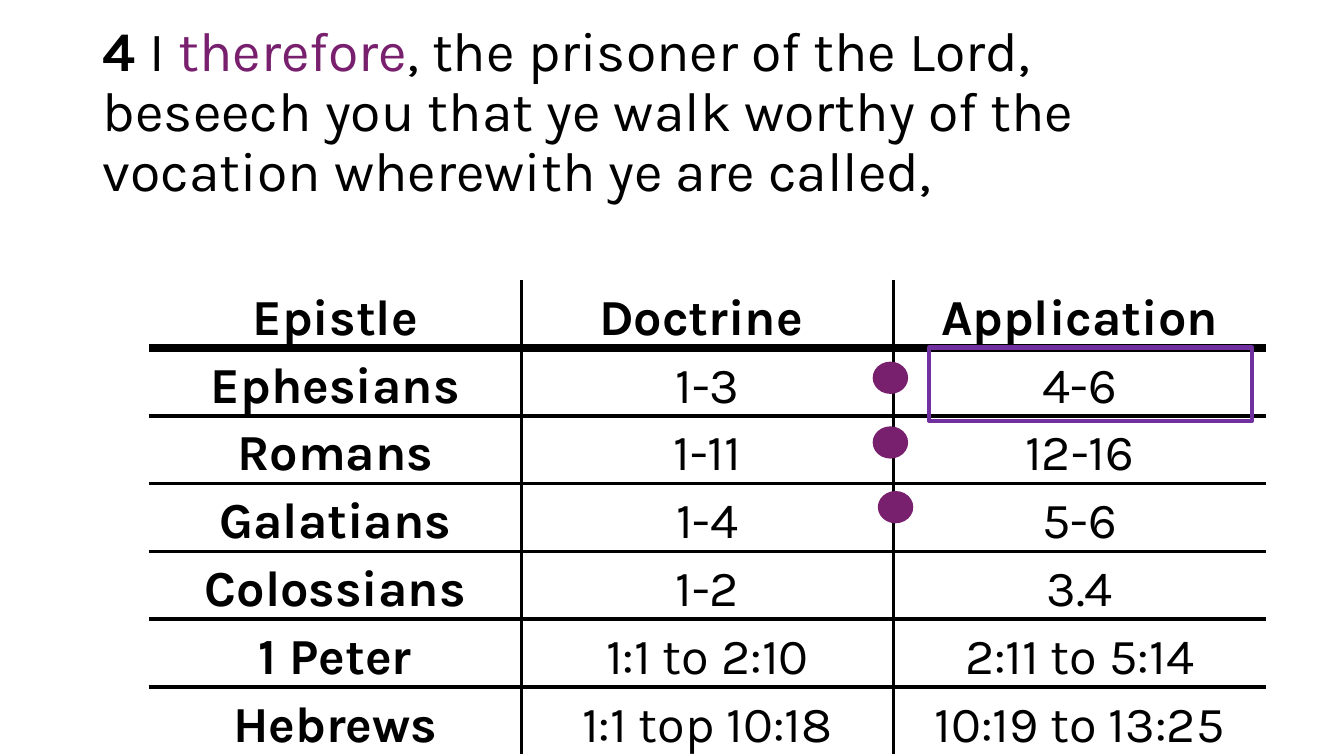
import pptx
import pptx.util
import pptx.dml.color
import pptx.enum.shapes
import pptx.enum.text
import pptx.oxml
import pptx.oxml.ns

Cm, Pt = pptx.util.Cm, pptx.util.Pt
RGBColor = pptx.dml.color.RGBColor
MSO_SHAPE = pptx.enum.shapes.MSO_SHAPE

BLACK = RGBColor(0x00, 0x00, 0x00)
WHITE = RGBColor(0xFF, 0xFF, 0xFF)
PLUM = RGBColor(0x78, 0x20, 0x6E)
VIOLET = RGBColor(0x70, 0x30, 0xA0)
FONT = "Karla"


def set_borders(cell, **borders):
    """Give each named side (L, R, T, B) a line of (colour, points)."""
    tcPr = cell._tc.get_or_add_tcPr()
    for i, (side, (color, points)) in enumerate(borders.items()):
        tcPr.insert(i, pptx.oxml.parse_xml(
            f'<a:ln{side} {pptx.oxml.ns.nsdecls("a")} w="{Pt(points)}">'
            f'<a:solidFill><a:srgbClr val="{color}"/></a:solidFill></a:ln{side}>'))


def add_outlined(kind, left, top, width, height, color, points):
    sp = s.shapes.add_shape(kind, Cm(left), Cm(top), Cm(width), Cm(height))
    sp.shadow.inherit = False
    sp.line.color.rgb = color
    sp.line.width = Pt(points)
    return sp


prs = pptx.Presentation()
prs.slide_width, prs.slide_height = Cm(33.87), Cm(19.05)
s = prs.slides.add_slide(prs.slide_layouts[6])

# Table of epistles
rows = [
    ("Epistle", "Doctrine ", "Application"),
    ("Ephesians", "1-3", "4-6"),
    ("Romans", "1-11", "12-16"),
    ("Galatians", "1-4", "5-6"),
    ("Colossians", "1-2", "3.4"),
    ("1 Peter", "1:1 to 2:10", "2:11 to 5:14"),
    ("Hebrews", "1:1 top 10:18", "10:19 to 13:25"),
]
last_row, last_col = len(rows) - 1, len(rows[0]) - 1
table = s.shapes.add_table(len(rows), len(rows[0]), Cm(3.76), Cm(7.06),
                           Cm(28.14), Cm(10.49)).table
table.first_row = table.horz_banding = False
for col in table.columns:
    col.width = Cm(9.38)

outer, inner, heavy = (WHITE, 1), (BLACK, 3), (BLACK, 6)
row_lines = [outer, heavy] + [inner] * (last_row - 1) + [outer]
col_lines = [outer, inner, inner, outer]
for i, texts in enumerate(rows):
    table.rows[i].height = Cm(1.57 if i else 1.07)
    for j, text in enumerate(texts):
        cell = table.cell(i, j)
        cell.fill.background()
        cell.margin_left = cell.margin_right = Cm(0.18)
        cell.margin_top = cell.margin_bottom = 0
        set_borders(cell, L=col_lines[j], R=col_lines[j + 1],
                    T=row_lines[i], B=row_lines[i + 1])
        p = cell.text_frame.paragraphs[0]
        p.text = text
        p.alignment = pptx.enum.text.PP_ALIGN.CENTER
        p.line_spacing = 1.15
        p.space_after = Pt(8)
        p.font.name = FONT
        p.font.size = Pt(36)
        p.font.bold = i == 0 or j == 0
        p.font.color.rgb = BLACK

# Verse
tf = s.shapes.add_textbox(Cm(2.34), Cm(1.02), Cm(29.21), Cm(3.68)).text_frame
tf.word_wrap = True
tf.vertical_anchor = pptx.enum.text.MSO_ANCHOR.MIDDLE
p = tf.paragraphs[0]
p.line_spacing = 0.9
p.font.name = FONT
p.font.size = Pt(39.6)
for text, bold, color in [
    ("4 ", True, BLACK),
    ("I ", False, BLACK),
    ("therefore", False, PLUM),
    (", the prisoner of the Lord, beseech you that ye walk worthy of the "
     "vocation wherewith ye are called,", False, BLACK),
]:
    r = p.add_run()
    r.text = text
    r.font.bold = bold
    r.font.color.rgb = color

# Dots between doctrine and application
for i, left in enumerate([22.02, 22.02, 22.15]):
    dot = add_outlined(MSO_SHAPE.OVAL, left, 9.14 + 1.63 * i, 0.84, 0.76, PLUM, 1.5)
    dot.fill.solid()
    dot.fill.fore_color.rgb = PLUM

# Frame around the Ephesians application
frame = add_outlined(MSO_SHAPE.RECTANGLE, 23.42, 8.76, 8.13, 1.85, VIOLET, 3)
frame.fill.background()

prs.save("out.pptx")
